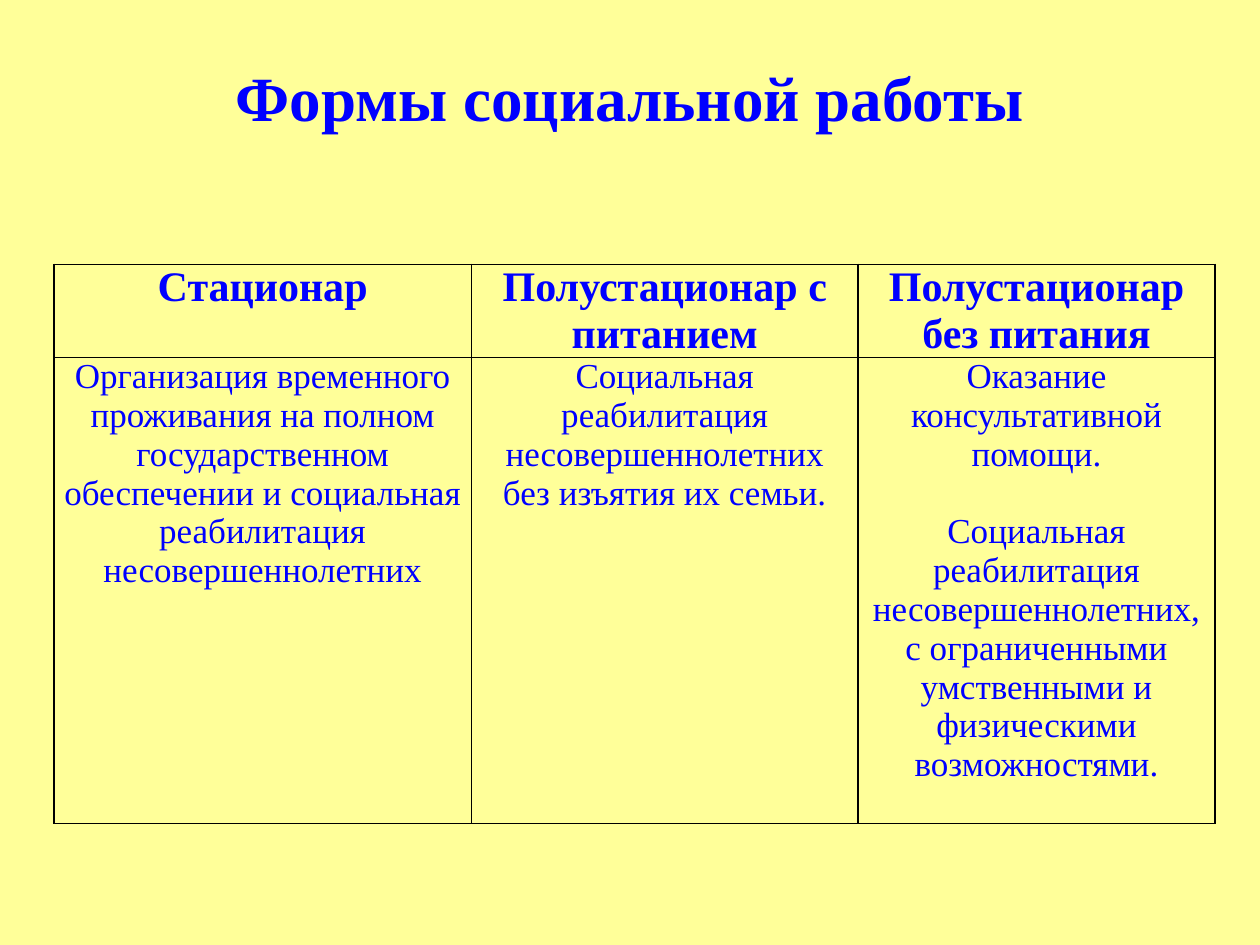
from lxml.etree import SubElement
from pptx import Presentation
from pptx.dml.color import RGBColor
from pptx.enum.text import MSO_ANCHOR, PP_ALIGN
from pptx.oxml.ns import qn
from pptx.util import Cm, Pt

BLUE = RGBColor(0x00, 0x00, 0xFF)
YELLOW = RGBColor(0xFF, 0xFF, 0x99)
BLACK = RGBColor(0x00, 0x00, 0x00)
FONT = "Times New Roman"

# Each column: width in cm, heading, paragraphs
FORMS = [
    (8.41, "Стационар",
     ["Организация временного проживания на полном государственном "
      "обеспечении и социальная реабилитация несовершеннолетних"]),
    (7.8, "Полустационар с питанием",
     ["Социальная реабилитация несовершеннолетних без изъятия их семьи."]),
    (7.19, "Полустационар без питания",
     ["Оказание консультативной помощи.",
      "Социальная реабилитация несовершеннолетних, с ограниченными "
      "умственными и физическими возможностями."]),
]
ROWS = [1.87, 9.4]


def add_text(frame, lines, size, bold=False):
    """Write centred paragraphs, set one line apart."""
    for i, line in enumerate(lines):
        para = frame.add_paragraph() if i else frame.paragraphs[0]
        para.alignment = PP_ALIGN.CENTER
        if i:
            para.space_before = Pt(22)
        run = para.add_run()
        run.text = line
        font = run.font
        font.name, font.size, font.bold = FONT, Pt(size), bold
        font.color.rgb = BLUE


def add_title(slide, text):
    title = slide.shapes.title
    title.left, title.top = Cm(1.27), Cm(0.76)
    title.width, title.height = Cm(22.86), Cm(2.36)
    title.text_frame.vertical_anchor = MSO_ANCHOR.MIDDLE
    add_text(title.text_frame, [text], 36, True)


def set_cell(cell, lines, size, bold):
    cell.margin_left = cell.margin_right = Cm(0.13)
    cell.margin_top = cell.margin_bottom = 0
    # Borders come before the fill in the cell properties
    props = cell._tc.get_or_add_tcPr()
    for side in ("L", "R", "T", "B"):
        edge = SubElement(props, qn(f"a:ln{side}"), w=str(Pt(1)))
        paint = SubElement(edge, qn("a:solidFill"))
        SubElement(paint, qn("a:srgbClr"), val=str(BLACK))
    cell.fill.background()
    add_text(cell.text_frame, lines, size, bold)


def add_grid(slide):
    width = sum(form[0] for form in FORMS)
    frame = slide.shapes.add_table(len(ROWS), len(FORMS), Cm(1.09), Cm(5.33),
                                   Cm(width), Cm(sum(ROWS)))
    table = frame.table
    table.first_row = table.horz_banding = False
    for row, high in zip(table.rows, ROWS):
        row.height = Cm(high)
    for col, (wide, head, body) in enumerate(FORMS):
        table.columns[col].width = Cm(wide)
        set_cell(table.cell(0, col), [head], 24, True)
        set_cell(table.cell(1, col), body, 20, False)


def main():
    deck = Presentation()
    deck.slide_width, deck.slide_height = Cm(25.4), Cm(19.05)
    slide = deck.slides.add_slide(deck.slide_layouts[5])
    # Background
    fill = slide.background.fill
    fill.solid()
    fill.fore_color.rgb = YELLOW
    # Content
    add_title(slide, "Формы социальной работы")
    add_grid(slide)
    deck.save("out.pptx")


if __name__ == "__main__":
    main()
